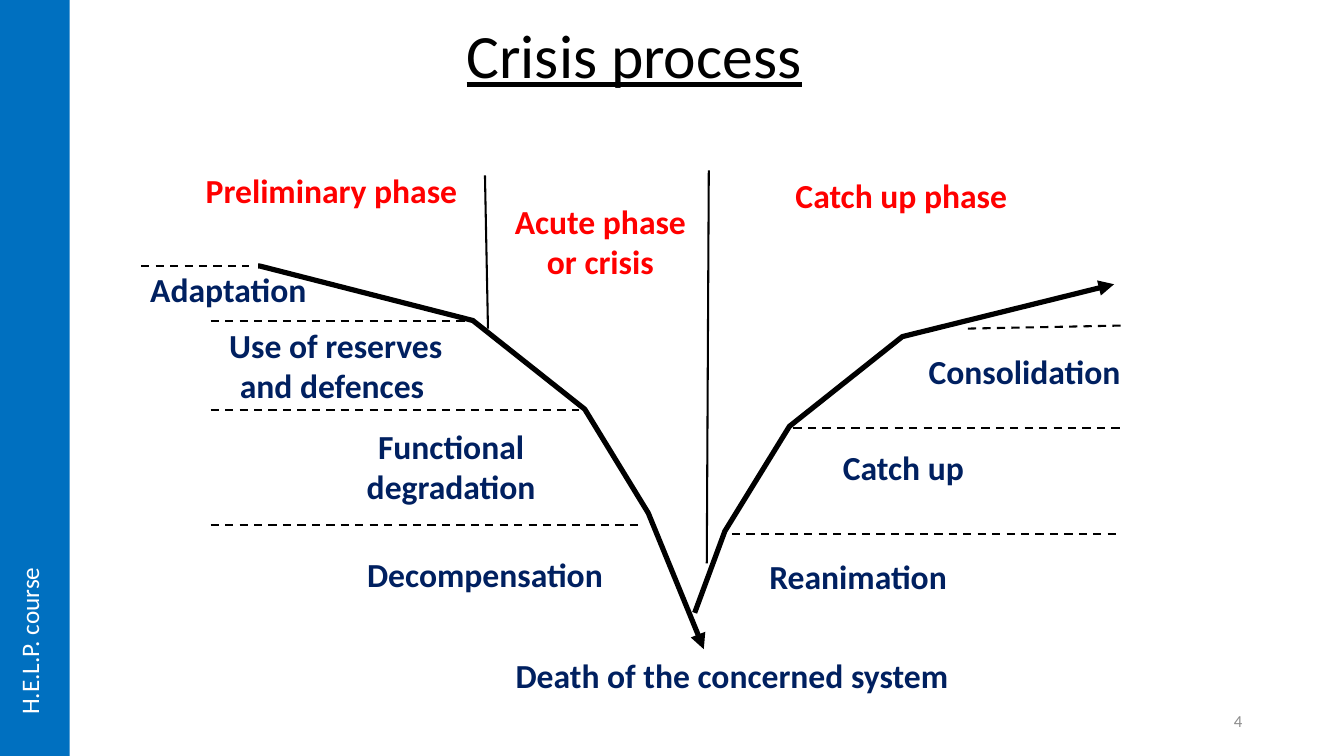
import lxml.etree
import pptx
import pptx.util
import pptx.dml.color
import pptx.enum.dml
import pptx.enum.shapes
import pptx.enum.text
import pptx.oxml.ns

Inches, Pt = pptx.util.Inches, pptx.util.Pt
RGBColor = pptx.dml.color.RGBColor
Align = pptx.enum.text.PP_ALIGN
Anchor = pptx.enum.text.MSO_ANCHOR
Fit = pptx.enum.text.MSO_AUTO_SIZE
qn = pptx.oxml.ns.qn

BLACK = RGBColor(0x00, 0x00, 0x00)
WHITE = RGBColor(0xFF, 0xFF, 0xFF)
NAVY = RGBColor(0x00, 0x20, 0x60)
RED = RGBColor(0xFF, 0x00, 0x00)
BLUE = RGBColor(0x00, 0x70, 0xC0)
GREY = RGBColor(0x8C, 0x8C, 0x8C)

TITLE = "Crisis process"
COURSE = "H.E.L.P. course"
NUMBER = "4"

LEFT, MID, TOP = Align.LEFT, Anchor.MIDDLE, Anchor.TOP
CENTER = Align.CENTER

# text, (left, top, width, height), colour, alignment, anchor
LABELS = [
    ("Preliminary phase", (2.04, 1.69, 2.64, 0.44), RED, LEFT, TOP),
    ("Acute phase or crisis", (5.07, 1.89, 1.77, 1), RED, CENTER, MID),
    ("Catch up phase", (7.89, 1.74, 2.6, 0.44), RED, LEFT, TOP),
    ("Adaptation", (1.49, 2.67, 1.97, 0.19), NAVY, LEFT, TOP),
    ("Use of reserves and defences ", (2.14, 3.27, 2.38, 0.7), NAVY, CENTER, MID),
    ("Functional degradation", (3.41, 4.39, 2.13, 0.47), NAVY, CENTER, MID),
    ("Decompensation", (3.64, 5.5, 2.49, 0.23), NAVY, LEFT, TOP),
    ("Reanimation", (7.63, 5.51, 2.56, 0.51), NAVY, LEFT, TOP),
    ("Catch up", (8.36, 4.43, 1.82, 0.23), NAVY, LEFT, TOP),
    ("Consolidation", (9.21, 3.48, 2.3, 0.55), NAVY, LEFT, TOP),
    ("Death of the concerned system", (5.11, 6.5, 4.3, 0.44), NAVY, CENTER, TOP),
]

# x and y of both ends
STAGES = [
    (1.4, 2.64, 2.47, 2.64),
    (2.09, 3.18, 4.63, 3.18),
    (2.09, 4.07, 5.74, 4.07),
    (2.09, 5.21, 6.34, 5.21),
    (9.6, 3.26, 11.12, 3.23),
    (7.87, 4.25, 11.12, 4.25),
    (7.26, 5.3, 11.12, 5.3),
]
PHASES = [(4.84, 3.26, 4.81, 1.74), (7.01, 5.59, 7.03, 1.69)]

DECLINE = [(2.56, 2.64), (2.58, 2.64), (4.69, 3.18), (5.8, 4.06),
           (6.43, 5.09), (6.97, 6.41), (6.98, 6.44)]
RECOVERY = [(6.89, 6.08), (7.19, 5.27), (7.83, 4.23), (8.95, 3.34),
            (11.05, 2.82)]


def write(frame, text, size, color, align=LEFT, bold=False):
    para = frame.paragraphs[0]
    para.alignment = align
    run = para.add_run()
    run.text = text
    font = run.font
    font.name, font.size, font.bold = "Calibri", Pt(size), bold
    font.color.rgb = color
    return para, font


def box(slide, place, anchor=TOP, inset=None):
    """Add an empty text box, with equal insets if given."""
    shape = slide.shapes.add_textbox(*map(Inches, place))
    frame = shape.text_frame
    frame.word_wrap = True
    frame.vertical_anchor = anchor
    if inset is not None:
        frame.margin_left = frame.margin_right = Inches(inset)
        frame.margin_top = frame.margin_bottom = Inches(inset)
    return shape


def rule(slide, ends, dashed):
    line = slide.shapes.add_connector(
        pptx.enum.shapes.MSO_CONNECTOR.STRAIGHT, *map(Inches, ends))
    line.line.color.rgb = BLACK
    line.line.width = Pt(1.48)
    if dashed:
        line.line.dash_style = pptx.enum.dml.MSO_LINE.DASH
    lxml.etree.SubElement(line.element.spPr, qn("a:effectLst"))


def curve(slide, points):
    """Draw an open line through the points, ending in an arrowhead."""
    spots = [(Inches(x), Inches(y)) for x, y in points]
    trace = slide.shapes.build_freeform(*spots[0], scale=1.0)
    trace.add_line_segments(spots[1:], close=False)
    shape = trace.convert_to_shape()
    shape.shadow.inherit = False
    shape.fill.background()
    shape.line.color.rgb = BLACK
    shape.line.width = Pt(3.71)
    line = shape.element.spPr.find(qn("a:ln"))
    lxml.etree.SubElement(line, qn("a:tailEnd")).set("type", "triangle")


def main():
    deck = pptx.Presentation()
    deck.slide_width, deck.slide_height = Inches(13.33), Inches(7.5)
    slide = deck.slides.add_slide(deck.slide_layouts[5])

    title = slide.shapes.title
    title.left, title.top = Inches(2.04), Inches(-0.29)
    title.width, title.height = Inches(8.5), Inches(1.25)
    frame = title.text_frame
    frame.auto_size = Fit.NONE
    frame.vertical_anchor = Anchor.BOTTOM
    para, font = write(frame, TITLE, 44, BLACK, CENTER)
    para.line_spacing = 0.9
    font.underline = True

    for ends in STAGES:
        rule(slide, ends, True)
    for ends in PHASES:
        rule(slide, ends, False)
    for points in (RECOVERY, DECLINE):
        curve(slide, points)
    for text, place, color, align, anchor in LABELS:
        label = box(slide, place, anchor, 0)
        write(label.text_frame, text, 24, color, align, True)

    band = slide.shapes.add_shape(
        pptx.enum.shapes.MSO_SHAPE.RECTANGLE, 0, 0, Inches(0.69),
        deck.slide_height)
    band.shadow.inherit = False
    band.fill.solid()
    band.fill.fore_color.rgb = BLUE
    band.line.fill.background()

    course = box(slide, (0.09, 5.61, 0.5, 1.58))
    course.text_frame.word_wrap = False
    course.text_frame.auto_size = Fit.SHAPE_TO_FIT_TEXT
    body = course.element.find(".//" + qn("a:bodyPr"))
    body.set("vert", "vert270")
    write(course.text_frame, COURSE, 18, WHITE)

    number = box(slide, (9.42, 6.95, 3, 0.4), MID)
    write(number.text_frame, NUMBER, 12, GREY, Align.RIGHT)

    deck.save("out.pptx")


if __name__ == "__main__":
    main()
